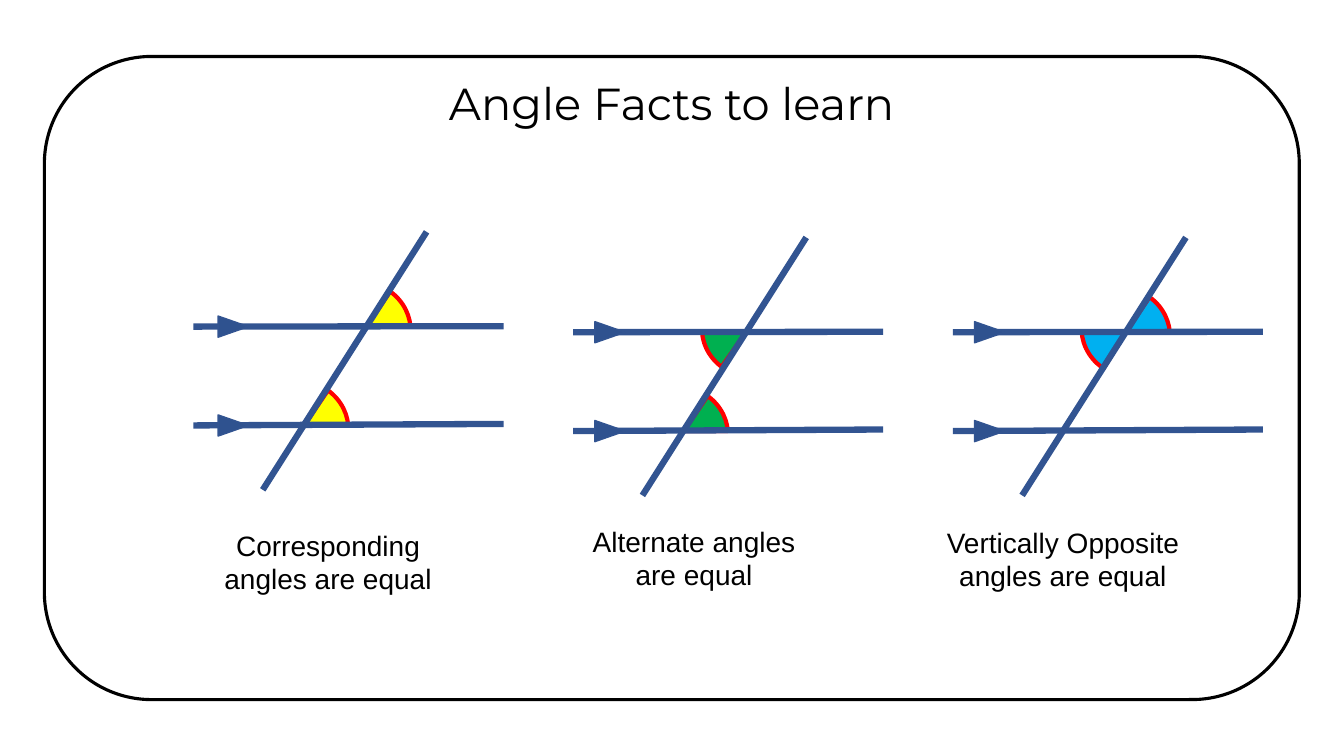
import pptx
import pptx.util
import pptx.dml.color
import pptx.enum.shapes
import pptx.enum.text
import pptx.oxml
from dataclasses import dataclass

Pt = pptx.util.Pt
Shape = pptx.enum.shapes.MSO_SHAPE


@dataclass(frozen=True)
class Theme:
    black: str = "000000"
    white: str = "FFFFFF"
    blue: str = "325491"
    arrow: str = "2F528F"
    red: str = "FF0000"
    head: str = "Montserrat"
    body: str = "Arial"
    big: int = 32
    small: int = 20


THEME = Theme()
TITLE = "Angle Facts to learn"

# Each angle: crossing (top or low), side of the crossing, end of its sweep
PANELS = [
    dict(text="Corresponding angles are equal", color="FFFF00",
         top=233.3, tip=28.4, label=(140.4, 373.7),
         angles=[("low", "above", 59.16), ("top", "above", 59.16)]),
    dict(text="Alternate angles are equal", color="00B050",
         top=237.3, tip=26.3, label=(401.8, 370.8),
         angles=[("low", "above", 59.16), ("top", "below", 59.16)]),
    dict(text="Vertically Opposite angles are equal", color="00B0F0",
         top=237.3, tip=26.3, label=(665.3, 371.5),
         angles=[("top", "below", 61.42), ("top", "above", 59.16)]),
]

LEFT, STEP = 138.2, 271.2
GAP = 70.6
CROSS = {"top": (123.5, 0), "low": (79, GAP)}
TURN = {"above": 42.9, "below": 223.8}
LINES = [((0, 0), (221.5, -0.3)),
         ((0, GAP), (221.5, 69.5)),
         ((49.5, 116.6), (166.5, -67.7))]
PIE = (65.5, 60.5)
ARROW = (15.1, 21.6)
LABEL = (187.9, 55.4)


def rgb(code):
    return pptx.dml.color.RGBColor.from_string(code)


def add_shape(kind, box, fill, edge=None, width=1):
    shape = slide.shapes.add_shape(kind, *map(Pt, box))
    shape.shadow.inherit = False
    shape.fill.solid()
    shape.fill.fore_color.rgb = rgb(fill)
    if edge:
        shape.line.color.rgb = rgb(edge)
        shape.line.width = Pt(width)
    else:
        shape.line.fill.background()
    return shape


def centre(x, y, size):
    """Give the box of this size whose middle is at x, y."""
    wide, high = size
    return x - wide / 2, y - high / 2, wide, high


def add_line(start, end):
    line = slide.shapes.add_connector(
        pptx.enum.shapes.MSO_CONNECTOR.STRAIGHT, *map(Pt, start + end))
    line.line.color.rgb = rgb(THEME.blue)
    line.line.width = Pt(4.5)
    line.element.spPr.append(pptx.oxml.parse_xml(
        '<a:effectLst xmlns:a='
        '"http://schemas.openxmlformats.org/drawingml/2006/main"/>'))


def write(shape, text, *, font, size, color=THEME.black):
    frame = shape.text_frame
    frame.text = text
    frame.word_wrap = True
    frame.auto_size = pptx.enum.text.MSO_AUTO_SIZE.SHAPE_TO_FIT_TEXT
    frame.vertical_anchor = pptx.enum.text.MSO_ANCHOR.TOP
    para = frame.paragraphs[0]
    para.alignment = pptx.enum.text.PP_ALIGN.CENTER
    style = para.runs[0].font
    style.name, style.size = font, Pt(size)
    style.color.rgb = rgb(color)


def add_angle(x, y, side, sweep, color):
    pie = add_shape(Shape.PIE, centre(x, y, PIE), color, THEME.red, 3)
    pie.adjustments[0] = 25.84
    pie.adjustments[1] = sweep
    pie.rotation = TURN[side]
    pie.element.spPr.xfrm.set("flipV", "1")


def add_panel(left, panel):
    top = panel["top"]
    for spot, side, sweep in panel["angles"]:
        x, y = CROSS[spot]
        add_angle(left + x, top + y, side, sweep, panel["color"])
    for ends in LINES:
        add_line(*[(left + x, top + y) for x, y in ends])
    for y in (0, GAP):
        box = centre(left + panel["tip"], top + y, ARROW)
        arrow = add_shape(Shape.ISOSCELES_TRIANGLE, box,
                          THEME.arrow, THEME.blue)
        arrow.rotation = 90
    label = add_shape(Shape.RECTANGLE, panel["label"] + LABEL, THEME.white)
    write(label, panel["text"], font=THEME.body, size=THEME.small)


deck = pptx.Presentation()
deck.slide_width, deck.slide_height = Pt(960), Pt(540)
slide = deck.slides.add_slide(deck.slide_layouts[5])

border = add_shape(Shape.ROUNDED_RECTANGLE, (31.7, 40.3, 896.4, 459.4),
                   THEME.white, THEME.black, 2.25)
title = slide.shapes.title
title.left, title.top, title.width, title.height = map(
    Pt, (286.6, 50.4, 386.6, 46))
write(title, TITLE, font=THEME.head, size=THEME.big)
border.element.addnext(title.element)  # bring the title in front

for place, panel in enumerate(PANELS):
    add_panel(LEFT + place * STEP, panel)

deck.save("out.pptx")
